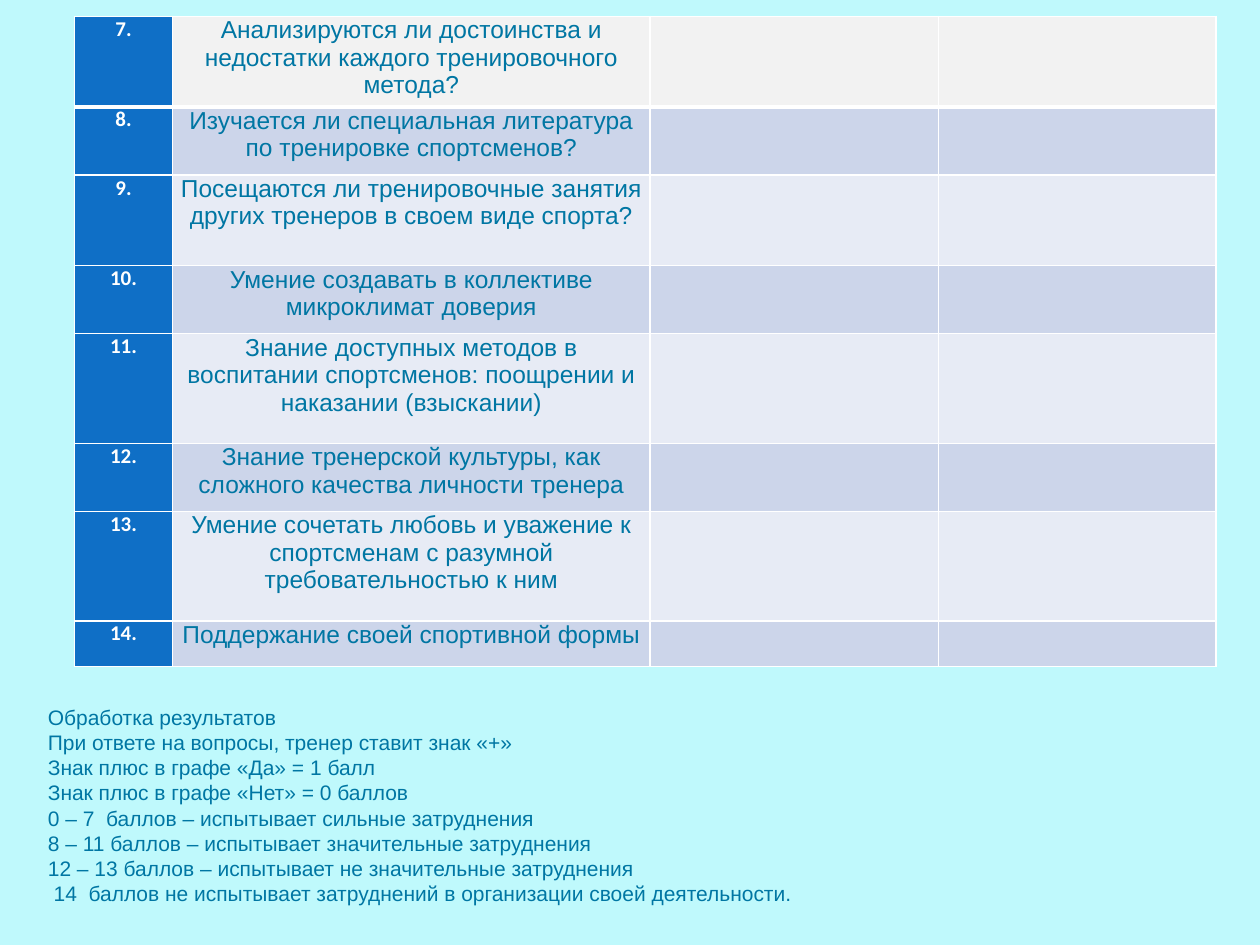
"""Build the trainer self-assessment slide with its questionnaire and scoring key."""
from lxml import etree
from pptx import Presentation
from pptx.dml.color import RGBColor
from pptx.enum.text import MSO_ANCHOR, MSO_AUTO_SIZE, PP_ALIGN
from pptx.oxml.ns import qn
from pptx.util import Inches, Pt

LEFT, CENTER = PP_ALIGN.LEFT, PP_ALIGN.CENTER
MIDDLE = MSO_ANCHOR.MIDDLE
NO_AUTOFIT = MSO_AUTO_SIZE.NONE
TITLE_ONLY = 5
WIDTH, HEIGHT = 10, 7.5

COLORS = {
    "background": "BFF9FC",
    "text": "0076A3",
    "white": "FFFFFF",
    "number": "0F6FC6",
    "first": "F2F2F2",
    "dark": "CCD5EA",
    "light": "E7EBF5",
}

FIRST_NUMBER = 7
COLUMN_WIDTHS = [0.78, 3.79, 2.29, 2.2]
QUESTIONS = [
    ("Анализируются ли достоинства и недостатки каждого тренировочного метода?", 0.72),
    ("Изучается ли специальная литература по тренировке спортсменов?", 0.54),
    ("Посещаются ли тренировочные занятия других тренеров в своем виде спорта?", 0.72),
    ("Умение создавать в коллективе микроклимат доверия", 0.54),
    ("Знание доступных методов в воспитании спортсменов: поощрении и наказании (взыскании)", 0.87),
    ("Знание тренерской культуры, как сложного качества личности тренера", 0.54),
    ("Умение сочетать любовь и уважение к спортсменам с разумной требовательностью к ним", 0.87),
    ("Поддержание своей спортивной формы", 0.36),
]
SCORING = [
    "Обработка результатов",
    "При ответе на вопросы, тренер ставит знак «+»",
    "Знак плюс в графе «Да» = 1 балл",
    "Знак плюс в графе «Нет» = 0 баллов",
    "0 – 7  баллов – испытывает сильные затруднения",
    "8 – 11 баллов – испытывает значительные затруднения",
    "12 – 13 баллов – испытывает не значительные затруднения",
    " 14  баллов не испытывает затруднений в организации своей деятельности.",
]


class SlideBuilder:
    """Hold the style and the current slide."""

    def __init__(self, presentation):
        """Add a slide with a plain background."""
        self.width = presentation.slide_width
        self.height = presentation.slide_height
        self.slide = presentation.slides.add_slide(presentation.slide_layouts[TITLE_ONLY])
        self.fill(self.slide.background.fill, "background")

    def fill(self, fill, color):
        """Apply a solid named colour."""
        fill.solid()
        fill.fore_color.rgb = RGBColor.from_string(COLORS[color])

    def box(self, left, top, width, height):
        """Turn shares of the slide into lengths."""
        return (round(left * self.width), round(top * self.height),
                round(width * self.width), round(height * self.height))

    def set_text(self, text_frame, text, size, color="text", font="Arial", bold=False, align=CENTER):
        """Set the text and format its runs."""
        text_frame.text = text
        for paragraph in text_frame.paragraphs:
            paragraph.alignment = align
            for run in paragraph.runs:
                run.font.name = font
                run.font.size = Pt(size)
                run.font.bold = bold
                run.font.color.rgb = RGBColor.from_string(COLORS[color])

    def scoring(self, lines, left, top, width, height):
        """Fill the title placeholder with the scoring key."""
        title = self.slide.shapes.title
        title.left, title.top, title.width, title.height = self.box(left, top, width, height)
        text_frame = title.text_frame
        text_frame.word_wrap = True
        text_frame.auto_size = NO_AUTOFIT
        text_frame.vertical_anchor = MIDDLE
        text_frame.margin_bottom = Inches(0.21)
        self.set_text(text_frame, "\v".join(lines), 12, align=LEFT)

    def borders(self, cell, bottom):
        """Draw white lines around a cell."""
        properties = cell._tc.get_or_add_tcPr()
        for side, points in (("L", 1), ("R", 1), ("T", 1), ("B", bottom)):
            line = etree.SubElement(properties, qn(f"a:ln{side}"), w=str(Pt(points)))
            solid = etree.SubElement(line, qn("a:solidFill"))
            etree.SubElement(solid, qn("a:srgbClr"), val=COLORS["white"])

    def style_cell(self, cell, color, bottom):
        """Set the margins, borders and fill of a cell."""
        cell.margin_left = cell.margin_right = Inches(0.06)
        cell.margin_top = cell.margin_bottom = 0
        self.borders(cell, bottom)
        self.fill(cell.fill, color)

    def questionnaire(self, questions, left, top):
        """Add the numbered questions with two empty answer columns."""
        heights = [height for _, height in questions]
        area = self.box(left, top, sum(COLUMN_WIDTHS) / WIDTH, sum(heights) / HEIGHT)
        table = self.slide.shapes.add_table(len(questions), len(COLUMN_WIDTHS), *area).table
        for column, width in zip(table.columns, COLUMN_WIDTHS):
            column.width = Inches(width)
        for index, (question, height) in enumerate(questions):
            row = table.rows[index]
            row.height = Inches(height)
            band = "first" if index == 0 else ("light", "dark")[index % 2]
            bottom = 3 if index == 0 else 1
            for position, cell in enumerate(row.cells):
                self.style_cell(cell, "number" if position == 0 else band, bottom)
            number_cell, question_cell = list(row.cells)[:2]
            self.set_text(number_cell.text_frame, f"{FIRST_NUMBER + index}.", 12,
                          "white", "Calibri", bold=True)
            self.set_text(question_cell.text_frame, question, 14)


def main():
    """Create and save the presentation."""
    presentation = Presentation()
    presentation.slide_width = Inches(WIDTH)
    presentation.slide_height = Inches(HEIGHT)
    builder = SlideBuilder(presentation)
    builder.scoring(SCORING, 0.28 / WIDTH, 5.72 / HEIGHT, 0.9, 0.2)
    builder.questionnaire(QUESTIONS, 0.59 / WIDTH, 0.13 / HEIGHT)
    presentation.save("out.pptx")


if __name__ == "__main__":
    main()
